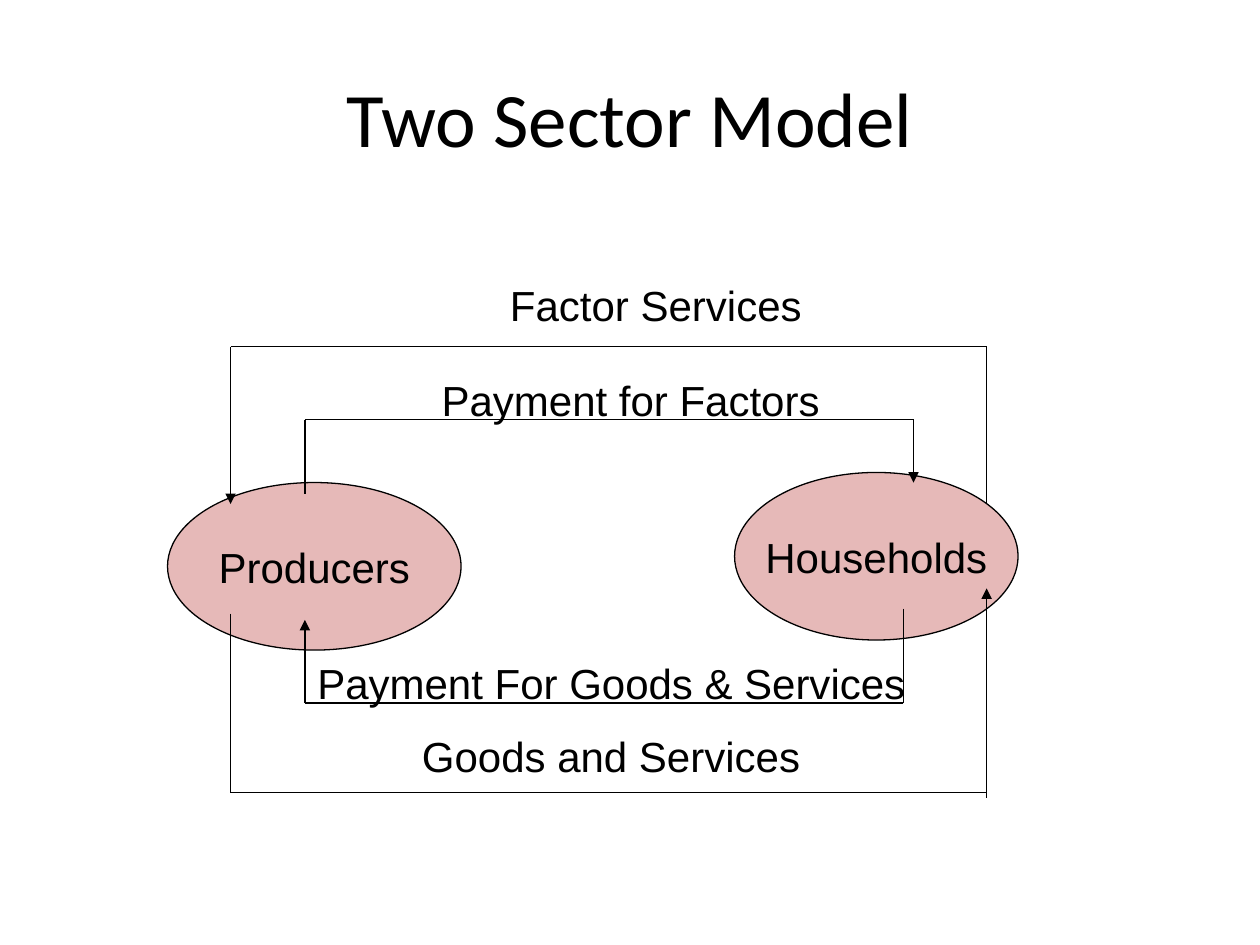
import pptx
import pptx.util
import pptx.dml.color
import pptx.enum.shapes
import pptx.enum.text
import pptx.oxml
import pptx.oxml.ns

Inches, Pt = pptx.util.Inches, pptx.util.Pt
ALIGN = pptx.enum.text.PP_ALIGN
MIDDLE = pptx.enum.text.MSO_ANCHOR.MIDDLE

COLORS = {"ink": "000000", "sector": "E6B9B8", "background": "FFFFFF"}
TITLE = "Two Sector Model"
SECTORS = [
    ("Producers", 1.33, 3.83, 2.33, 1.33),
    ("Households", 5.83, 3.75, 2.25, 1.33),
]
FLOWS = [
    {"label": "Factor Services", "box": (3.75, 2.17, 2.91, 0.51), "align": ALIGN.CENTER,
     "start": (7.83, 4), "rail": 2.75, "end": (1.83, 4)},
    {"label": "Payment for Factors", "box": (3.17, 2.92, 3.67, 0.5), "align": ALIGN.CENTER,
     "start": (2.42, 3.92), "rail": 3.33, "end": (7.25, 3.83)},
    {"label": "Payment For Goods & Services", "box": (2.42, 5.17, 5.33, 0.51), "align": ALIGN.LEFT,
     "start": (7.17, 4.83), "rail": 5.58, "end": (2.42, 4.92)},
    {"label": "Goods and Services", "box": (3.25, 5.75, 3.42, 0.5), "align": ALIGN.LEFT,
     "start": (1.83, 4.87), "rail": 6.29, "end": (7.83, 4.67), "overshoot": 0.04},
]


def color(name):
    return pptx.dml.color.RGBColor.from_string(COLORS[name])


def write(frame, text, size, font, align):
    frame.text = text
    paragraph = frame.paragraphs[0]
    paragraph.alignment = align
    run_font = paragraph.runs[0].font
    run_font.size = Pt(size)
    run_font.name = font
    run_font.color.rgb = color("ink")


def outline(line):
    line.color.rgb = color("ink")
    line.width = Pt(0.75)


def add_leg(slide, start, end, arrow=False):
    leg = slide.shapes.add_connector(
        pptx.enum.shapes.MSO_CONNECTOR.STRAIGHT, *map(Inches, (*start, *end)))
    outline(leg.line)
    namespace = pptx.oxml.ns.nsdecls("a")
    properties = leg._element.spPr
    if arrow:
        properties.find(pptx.oxml.ns.qn("a:ln")).append(
            pptx.oxml.parse_xml(f'<a:tailEnd {namespace} type="triangle"/>'))
    properties.append(pptx.oxml.parse_xml(f"<a:effectLst {namespace}/>"))


def add_sector(slide, name, *box):
    sector = slide.shapes.add_shape(
        pptx.enum.shapes.MSO_SHAPE.OVAL, *map(Inches, box))
    sector.shadow.inherit = False
    sector.fill.solid()
    sector.fill.fore_color.rgb = color("sector")
    outline(sector.line)
    sector.text_frame.word_wrap = False
    sector.text_frame.vertical_anchor = MIDDLE
    write(sector.text_frame, name, 24, "Arial", ALIGN.CENTER)


def add_flow(slide, label, box, align, start, rail, end, overshoot=0):
    corner, turn = (start[0], rail), (end[0], rail)
    add_leg(slide, start, corner)
    add_leg(slide, corner, turn)
    add_leg(slide, (end[0], rail + overshoot), end, arrow=True)
    caption = slide.shapes.add_textbox(*map(Inches, box))
    caption.text_frame.word_wrap = True
    write(caption.text_frame, label, 24, "Arial", align)


def main():
    deck = pptx.Presentation()
    deck.slide_width, deck.slide_height = Inches(10), Inches(7.5)
    slide = deck.slides.add_slide(deck.slide_layouts[5])
    slide.background.fill.solid()
    slide.background.fill.fore_color.rgb = color("background")

    title = slide.shapes.title
    title.left, title.top, title.width, title.height = map(Inches, (0.5, 0.3, 9, 1.25))
    title.text_frame.vertical_anchor = MIDDLE
    write(title.text_frame, TITLE, 44, "Calibri", ALIGN.CENTER)

    for sector in SECTORS:
        add_sector(slide, *sector)
    for flow in FLOWS:
        add_flow(slide, **flow)
    deck.save("out.pptx")


if __name__ == "__main__":
    main()
